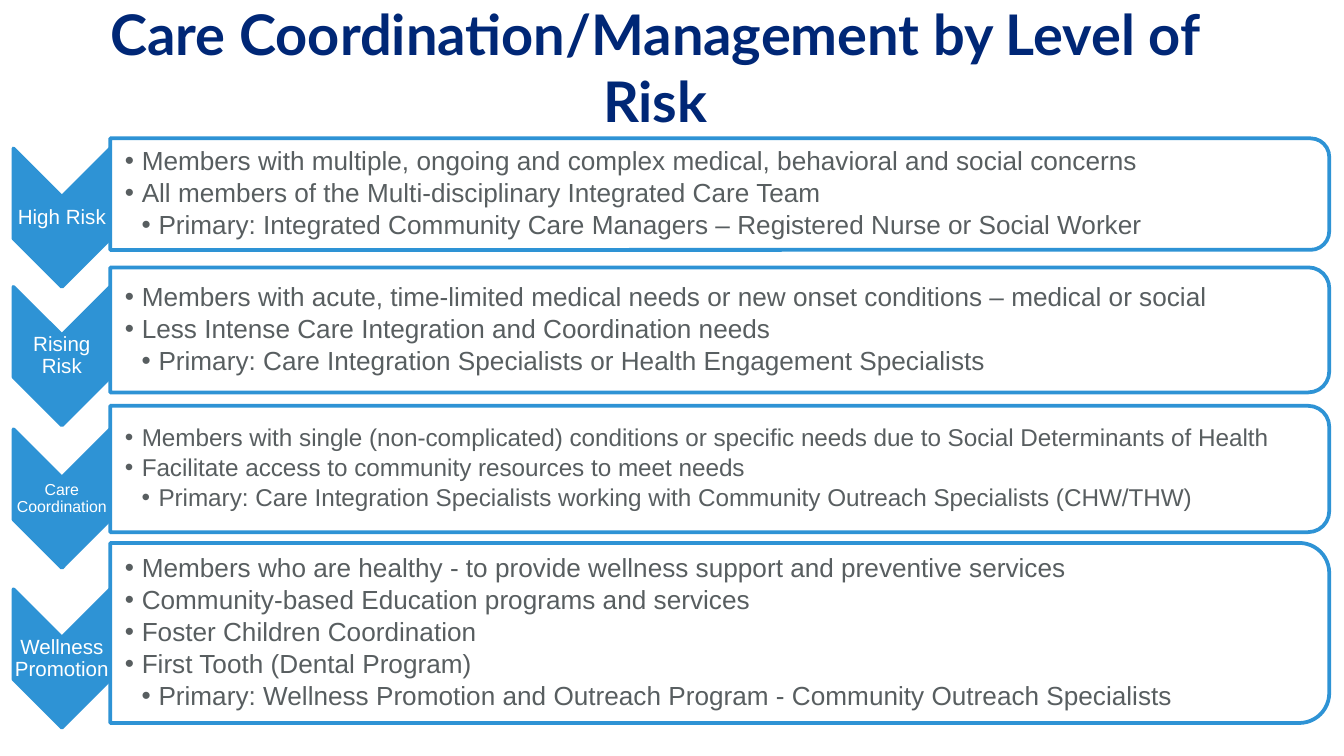
from lxml import etree
from pptx import Presentation
from pptx.dml.color import RGBColor
from pptx.enum.shapes import MSO_SHAPE
from pptx.enum.text import MSO_ANCHOR, MSO_AUTO_SIZE, PP_ALIGN
from pptx.oxml.ns import qn
from pptx.util import Inches, Pt

CHEVRON = MSO_SHAPE.CHEVRON
ROUNDED_PANEL = MSO_SHAPE.ROUND_2_SAME_RECTANGLE
MIDDLE = MSO_ANCHOR.MIDDLE
CENTER = PP_ALIGN.CENTER
NO_AUTOFIT = MSO_AUTO_SIZE.NONE

THEME = {
    "title_font": "Lato", "body_font": "Arial",
    "navy": RGBColor(0x00, 0x27, 0x76),
    "blue": RGBColor(0x2E, 0x93, 0xD5),
    "gray": RGBColor(0x58, 0x5E, 0x60),
    "white": RGBColor(0xFF, 0xFF, 0xFF),
    "title_size": 30, "line_width": 2,
}

TITLE = "Care Coordination/Management by Level of Risk"

# Positions are inches; the last bullet of each level names its primary staff.
RISK_LEVELS = [
    {"label": "High Risk", "label_size": 11, "text_size": 14,
     "top": 1.03, "height": 0.83, "chevron_middle": 1.62,
     "bullets": [
         "Members with multiple, ongoing and complex medical, behavioral and social concerns",
         "All members of the Multi-disciplinary Integrated Care Team",
         "Primary: Integrated Community Care Managers – Registered Nurse or Social Worker"]},
    {"label": "Rising Risk", "label_size": 11, "text_size": 14,
     "top": 1.99, "height": 0.93, "chevron_middle": 2.65,
     "bullets": [
         "Members with acute, time-limited medical needs or new onset conditions – medical or social",
         "Less Intense Care Integration and Coordination needs",
         "Primary: Care Integration Specialists or Health Engagement Specialists"]},
    {"label": "Care Coordination", "label_size": 8.5, "text_size": 13,
     "top": 3.02, "height": 0.94, "chevron_middle": 3.71,
     "bullets": [
         "Members with single (non-complicated) conditions or specific needs due to Social "
         "Determinants of Health",
         "Facilitate access to community resources to meet needs",
         "Primary: Care Integration Specialists working with Community Outreach Specialists "
         "(CHW/THW)"]},
    {"label": "Wellness Promotion", "label_size": 11, "text_size": 14,
     "top": 4.04, "height": 1.34, "chevron_middle": 4.9,
     "bullets": [
         "Members who are healthy - to provide wellness support and preventive services",
         "Community-based Education programs and services",
         "Foster Children Coordination",
         "First Tooth (Dental Program)",
         "Primary: Wellness Promotion and Outreach Program - Community Outreach Specialists"]},
]

PANEL_LEFT, PANEL_WIDTH = 0.82, 9.07
CHEVRON_LEFT, CHEVRON_WIDTH, CHEVRON_HEIGHT = 0.1, 0.72, 1.03
LABEL_HEIGHT = 0.31
INDENT = 1 / 8


def set_font(font, name, size, color, bold=False):
    font.name = name
    font.size = Pt(size)
    font.color.rgb = color
    font.bold = bold


def add_turned_shape(slide, kind, left, top, width, height, fill):
    """Add a shape turned 90 degrees that covers the given area once turned."""
    shape = slide.shapes.add_shape(
        kind, Inches(left + (width - height) / 2), Inches(top + (height - width) / 2),
        Inches(height), Inches(width))
    shape.rotation = 90
    shape.shadow.inherit = False
    shape.fill.solid()
    shape.fill.fore_color.rgb = fill
    shape.line.color.rgb = THEME["blue"]
    shape.line.width = Pt(THEME["line_width"])
    etree.SubElement(shape.line._get_or_add_ln(), qn("a:round"))


def add_text_frame(slide, left, top, width, height, left_inset=0):
    box = slide.shapes.add_textbox(Inches(left), Inches(top), Inches(width), Inches(height))
    frame = box.text_frame
    frame.word_wrap = True
    frame.vertical_anchor = MIDDLE
    frame.margin_left = Inches(left_inset)
    frame.margin_right = frame.margin_top = frame.margin_bottom = 0
    return frame


def add_bullet(paragraph, level):
    paragraph.level = level
    properties = paragraph._p.get_or_add_pPr()
    properties.set("marL", str(Inches(INDENT * level)))
    properties.set("indent", str(-Inches(INDENT)))
    etree.SubElement(properties, qn("a:buFont"), typeface=THEME["body_font"])
    etree.SubElement(properties, qn("a:buChar"), char="•")


def add_risk_level(slide, risk):
    middle = risk["chevron_middle"]
    add_turned_shape(slide, CHEVRON, CHEVRON_LEFT, middle - CHEVRON_HEIGHT / 2,
                     CHEVRON_WIDTH, CHEVRON_HEIGHT, THEME["blue"])
    label = add_text_frame(slide, CHEVRON_LEFT, middle - LABEL_HEIGHT / 2,
                           CHEVRON_WIDTH, LABEL_HEIGHT).paragraphs[0]
    label.text = risk["label"]
    label.alignment = CENTER
    label.line_spacing = 0.9
    set_font(label.font, THEME["body_font"], risk["label_size"], THEME["white"])

    area = (PANEL_LEFT, risk["top"], PANEL_WIDTH, risk["height"])
    add_turned_shape(slide, ROUNDED_PANEL, *area, THEME["white"])
    frame = add_text_frame(slide, *area, left_inset=0.11)
    last = len(risk["bullets"]) - 1
    for index, text in enumerate(risk["bullets"]):
        paragraph = frame.add_paragraph() if index else frame.paragraphs[0]
        paragraph.text = text
        paragraph.line_spacing = 0.9
        paragraph.space_after = Pt(0.15 * risk["text_size"])
        add_bullet(paragraph, 2 if index == last else 1)
        set_font(paragraph.font, THEME["body_font"], risk["text_size"], THEME["gray"])


def add_title(slide):
    title = slide.shapes.title
    title.left, title.top = Inches(0.35), Inches(0.23)
    title.width, title.height = Inches(9.05), Inches(0.53)
    frame = title.text_frame
    frame.text = TITLE
    frame.auto_size = NO_AUTOFIT
    frame.vertical_anchor = MIDDLE
    paragraph = frame.paragraphs[0]
    paragraph.alignment = CENTER
    set_font(paragraph.font, THEME["title_font"], THEME["title_size"], THEME["navy"], bold=True)


def main():
    presentation = Presentation()
    presentation.slide_width = Inches(10)
    presentation.slide_height = Inches(10 * 9 / 16)
    slide = presentation.slides.add_slide(presentation.slide_layouts[5])
    add_title(slide)
    for risk in RISK_LEVELS:
        add_risk_level(slide, risk)
    presentation.save("out.pptx")


if __name__ == "__main__":
    main()
